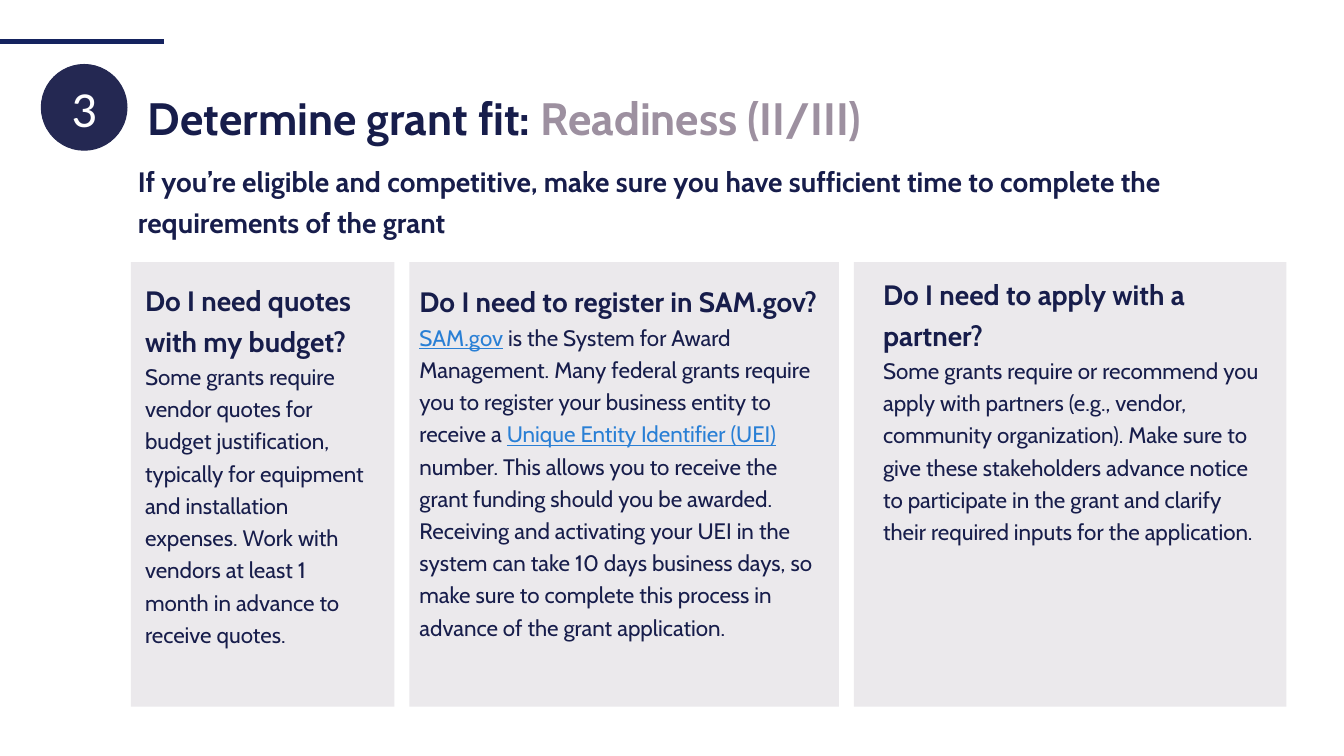
"""Build the grant readiness slide: a numbered heading over three question panels."""
from pptx import Presentation
from pptx.dml.color import RGBColor as RGB
from pptx.enum.shapes import MSO_CONNECTOR as CONN, MSO_SHAPE as SHAPE
from pptx.enum.text import MSO_ANCHOR as ANCHOR, PP_ALIGN as ALIGN
from pptx.oxml.ns import qn
from pptx.util import Pt
from lxml.etree import SubElement


class Theme:
    navy = RGB(0x17, 0x1D, 0x4B)
    rule = RGB(0x15, 0x23, 0x5F)
    badge = RGB(0x24, 0x28, 0x52)
    mauve = RGB(0x9D, 0x90, 0xA0)
    link = RGB(0x29, 0x7F, 0xD5)
    panel = RGB(0xEB, 0xE9, 0xEC)
    white = RGB(0xFF, 0xFF, 0xFF)
    font = "Cabin"
    badge_font = "Calibri"
    title = Pt(32.4)
    number = Pt(36)
    heading = Pt(20)
    body = Pt(16)


def add_text(left, top, width, height, paragraphs, spacing=1.2, inset=None):
    """Add a text box from (size, bold, [(text, colour), ...]) paragraphs."""
    tf = s.shapes.add_textbox(Pt(left), Pt(top), Pt(width), Pt(height)).text_frame
    tf.word_wrap = True
    if inset is not None:
        tf.margin_left = tf.margin_right = tf.margin_top = tf.margin_bottom = Pt(inset)
    for i, (size, bold, runs) in enumerate(paragraphs):
        p = tf.add_paragraph() if i else tf.paragraphs[0]
        p.line_spacing = spacing
        p.font.name, p.font.size, p.font.bold = Theme.font, size, bold
        if len(runs) == 1:
            p.font.color.rgb = runs[0][1]
        for text, colour in runs:
            r = p.add_run()
            r.text = text
            if len(runs) > 1:
                r.font.color.rgb = colour
            if colour == Theme.link:
                r.font.underline = True
    return tf


def add_shape(kind, left, top, width, height, fill):
    """Add a flat filled shape without outline or shadow."""
    sp = s.shapes.add_shape(kind, Pt(left), Pt(top), Pt(width), Pt(height))
    sp.shadow.inherit = False
    sp.fill.solid()
    sp.fill.fore_color.rgb = fill
    sp.line.fill.background()
    return sp


prs = Presentation()
prs.slide_width, prs.slide_height = Pt(960), Pt(540)
s = prs.slides.add_slide(prs.slide_layouts[6])

rule = s.shapes.add_connector(CONN.STRAIGHT, Pt(0), Pt(29.7), Pt(117), Pt(29.7))
rule.line.color.rgb = Theme.rule
rule.line.width = Pt(3)
SubElement(rule._element.spPr, qn("a:effectLst"))

badge = add_shape(SHAPE.OVAL, 29.5, 46.1, 61.2, 61.2, Theme.badge)
badge.line.color.rgb = Theme.badge
badge.line.width = Pt(0.75)
tf = badge.text_frame
tf.word_wrap = False
tf.vertical_anchor = ANCHOR.MIDDLE
p = tf.paragraphs[0]
p.text = "3"
p.alignment = ALIGN.CENTER
p.font.name, p.font.size, p.font.color.rgb = Theme.badge_font, Theme.number, Theme.white

title = [("Determine grant fit: ", Theme.navy), ("Readiness (II/III)", Theme.mauve)]
tf = add_text(98.6, 52.6, 819.4, 47.5, [(Theme.title, True, title)], spacing=1.4)
tf.vertical_anchor = ANCHOR.MIDDLE

lead = "If you’re eligible and competitive, make sure you have sufficient time to complete the requirements of the grant"
add_text(98.6, 113, 836, 81.4, [(Theme.heading, True, [(lead, Theme.navy)])], inset=0)

panels = [
    (188.1, 2.9, 7.2, 176.4, 294.5, "Do I need quotes with my budget?", [
        [("Some grants require vendor quotes for budget justification, typically for equipment and installation expenses. Work with vendors at least 1 month in advance to receive quotes.", Theme.navy)],
    ]),
    (306.7, 0, 7.9, 301.7, 317.5, "Do I need to register in SAM.gov?", [
        [("SAM.gov", Theme.link),
         (" is the System for Award Management. Many federal grants require you to register your business entity to receive a ", Theme.navy),
         ("Unique Entity Identifier (UEI)", Theme.link),
         (" number. This allows you to receive the grant funding should you be awarded.", Theme.navy)],
        [("Receiving and activating your UEI in the system can take 10 days business days, so make sure to complete this process in advance of the grant application.", Theme.navy)],
    ]),
    (308.9, 13.7, 2.9, 286.6, 247.7, "Do I need to apply with a partner?", [
        [("Some grants require or recommend you apply with partners (e.g., vendor, community organization). Make sure to give these stakeholders advance notice to participate in the grant and clarify their required inputs for the application.", Theme.navy)],
    ]),
]
left, top, height, gap = 93.6, 187.2, 317.5, 10.8
for width, dx, dy, text_width, text_height, question, answers in panels:
    add_shape(SHAPE.RECTANGLE, left, top, width, height, Theme.panel)
    paragraphs = [(Theme.heading, True, [(question, Theme.navy)])]
    paragraphs += [(Theme.body, False, runs) for runs in answers]
    add_text(left + dx, top + dy, text_width, text_height, paragraphs)
    left += width + gap

prs.save("out.pptx")
